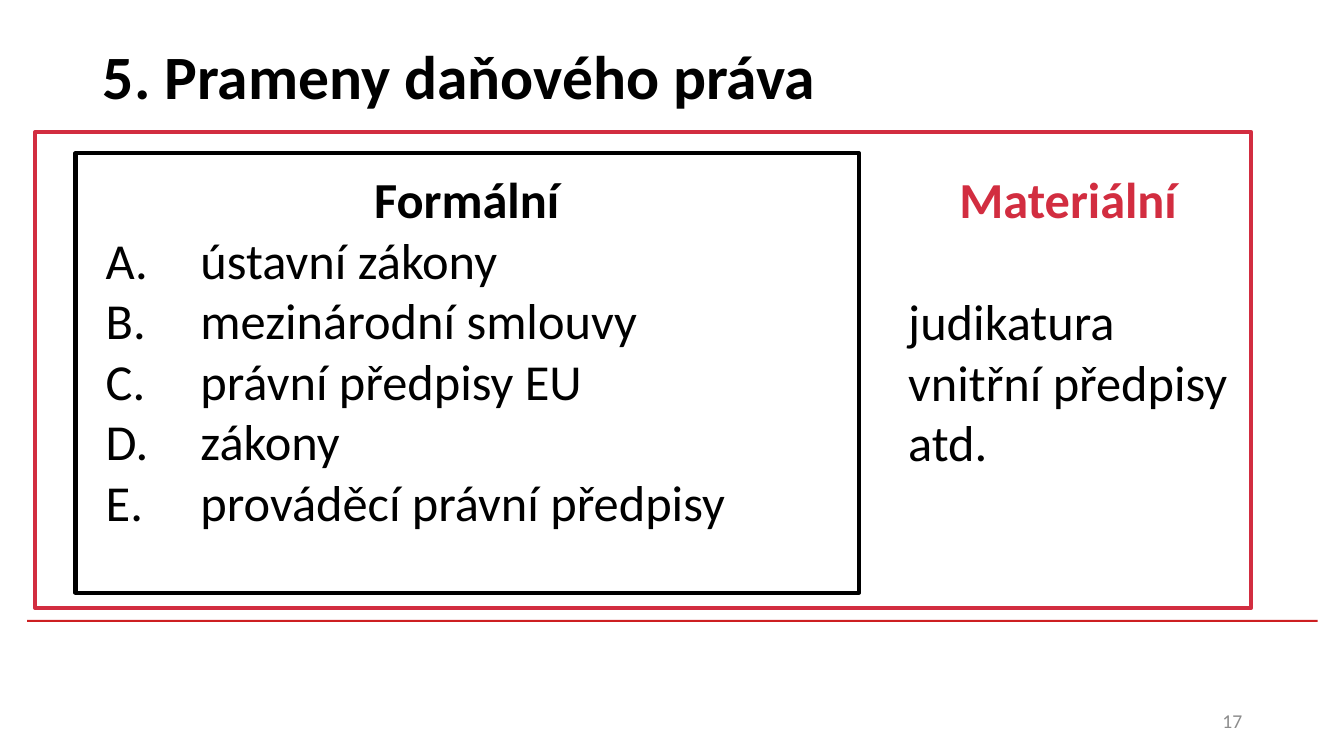
"""Build the slide on formal and material sources of tax law."""
from lxml.etree import SubElement
from pptx import Presentation
from pptx.dml.color import RGBColor
from pptx.enum.shapes import MSO_SHAPE
from pptx.enum.text import MSO_ANCHOR, MSO_AUTO_SIZE, PP_ALIGN
from pptx.oxml.ns import qn
from pptx.util import Pt

PX = 9144
FONT = "Calibri"
BLACK = RGBColor(0x00, 0x00, 0x00)
WHITE = RGBColor(0xFF, 0xFF, 0xFF)
RED = RGBColor(0xD2, 0x2D, 0x40)
RULE_RED = RGBColor(0xCD, 0x1F, 0x21)
GRAY = RGBColor(0x8C, 0x8C, 0x8C)

FORMAL_SOURCES = [
    "ústavní zákony",
    "mezinárodní smlouvy",
    "právní předpisy EU",
    "zákony",
    "prováděcí právní předpisy",
]
MATERIAL_SOURCES = ["judikatura", "vnitřní předpisy", "atd."]


def px(*lengths):
    """Turn lengths in px into EMU."""
    return [length * PX for length in lengths]


def write(para, text, size, color=BLACK, bold=False, align=PP_ALIGN.LEFT):
    """Set the text of a paragraph and format its run."""
    para.text = text
    para.alignment = align
    font = para.runs[0].font
    font.name, font.size, font.bold = FONT, Pt(size), bold
    font.color.rgb = color


def number_with_letter(para, indent):
    """Give a paragraph a capital letter number and a hanging indent."""
    properties = para._p.get_or_add_pPr()
    properties.set("marL", str(indent * PX))
    properties.set("indent", str(-indent * PX))
    SubElement(properties, qn("a:buFont"), typeface="+mj-lt")
    SubElement(properties, qn("a:buAutoNum"), type="alphaUcPeriod")


def add_rectangle(page, place, fill, line=None):
    """Add a plain rectangle, outlined if a line colour is given."""
    box = page.shapes.add_shape(MSO_SHAPE.RECTANGLE, *px(*place))
    box.shadow.inherit = False
    box.fill.solid()
    box.fill.fore_color.rgb = fill
    if line is None:
        box.line.fill.background()
    else:
        box.line.color.rgb = line
        box.line.width = Pt(3)


def add_text_frame(page, place):
    """Add a wrapping text box and return its text frame."""
    frame = page.shapes.add_textbox(*px(*place)).text_frame
    frame.word_wrap = True
    return frame


def add_title(page, text, place):
    """Place and format the title placeholder."""
    title = page.shapes.title
    title.left, title.top, title.width, title.height = px(*place)
    frame = title.text_frame
    frame.auto_size = MSO_AUTO_SIZE.NONE
    frame.vertical_anchor = MSO_ANCHOR.MIDDLE
    write(frame.paragraphs[0], text, 44, bold=True)


def add_sources(page, place, heading, color, sources, align, indent=0, gap=0):
    """Add a headed list of sources, lettered if an indent is given."""
    frame = add_text_frame(page, place)
    write(frame.paragraphs[0], heading, 36, color, True, PP_ALIGN.CENTER)
    frame.paragraphs[0].space_after = Pt(gap)
    for source in sources:
        para = frame.add_paragraph()
        if indent:
            number_with_letter(para, indent)
        write(para, source, 36, align=align)


def add_page_number(page, number, place):
    """Add the page number at the foot of the page."""
    frame = add_text_frame(page, place)
    frame.vertical_anchor = MSO_ANCHOR.MIDDLE
    write(frame.paragraphs[0], number, 14, GRAY, align=PP_ALIGN.RIGHT)


def main():
    """Build and save the deck."""
    deck = Presentation()
    deck.slide_width, deck.slide_height = px(1333, 750)
    page = deck.slides.add_slide(deck.slide_layouts[5])
    add_rectangle(page, (27, 615, 1280, 2), RULE_RED)
    add_title(page, "5. Prameny daňového práva", (92, 2, 1150, 145))
    add_rectangle(page, (35, 131, 1206, 472), WHITE, RED)
    add_sources(page, (891, 162, 337, 372), "Materiální", RED,
                MATERIAL_SOURCES, PP_ALIGN.JUSTIFY, gap=44)
    add_rectangle(page, (75, 152, 777, 436), WHITE, BLACK)
    add_sources(page, (95, 162, 736, 374), "Formální", BLACK,
                FORMAL_SOURCES, PP_ALIGN.LEFT, indent=94)
    add_page_number(page, "17", (942, 695, 300, 40))
    deck.save("out.pptx")


if __name__ == "__main__":
    main()
